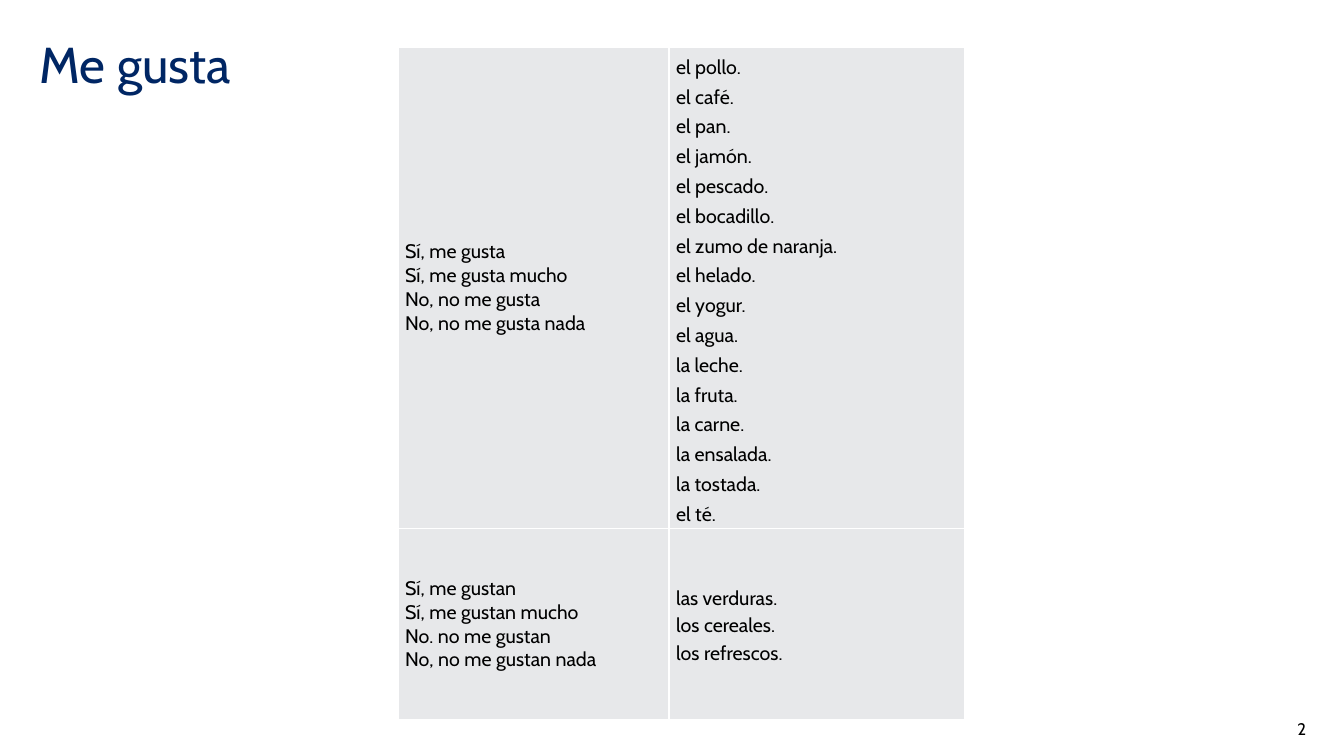
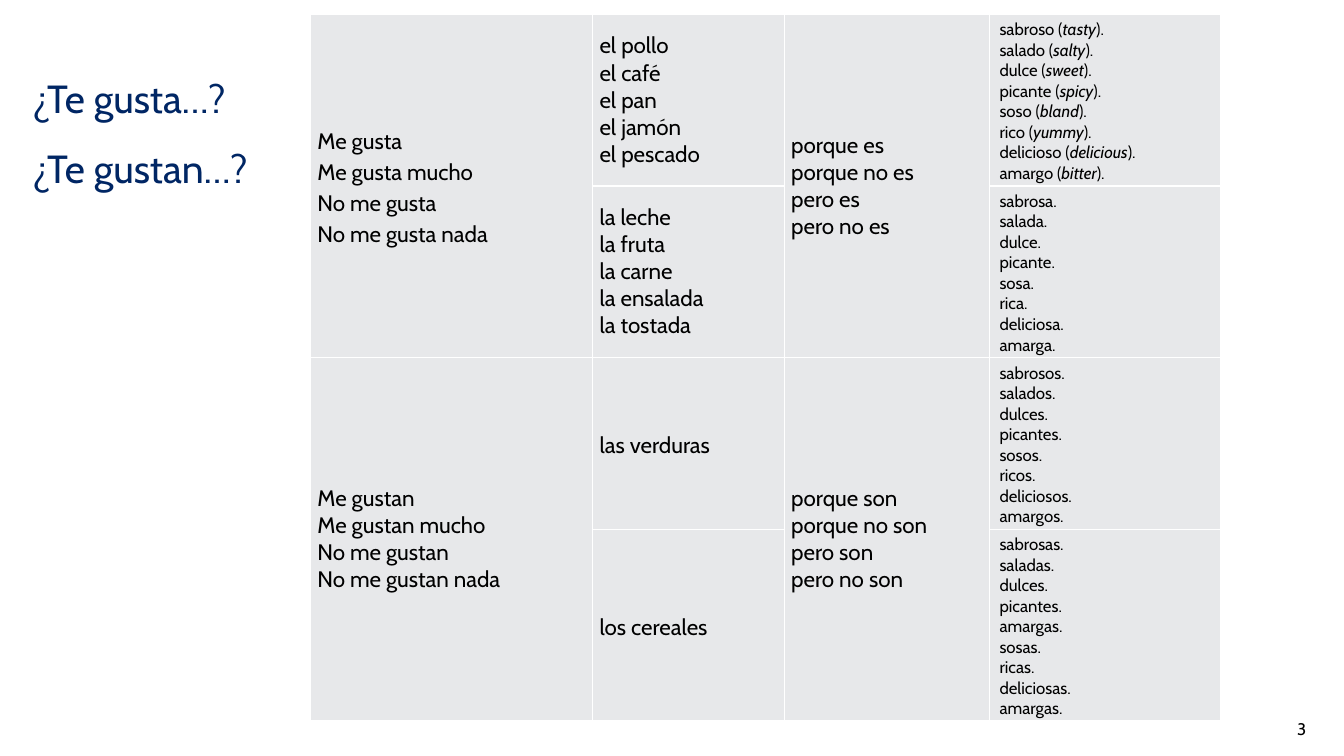
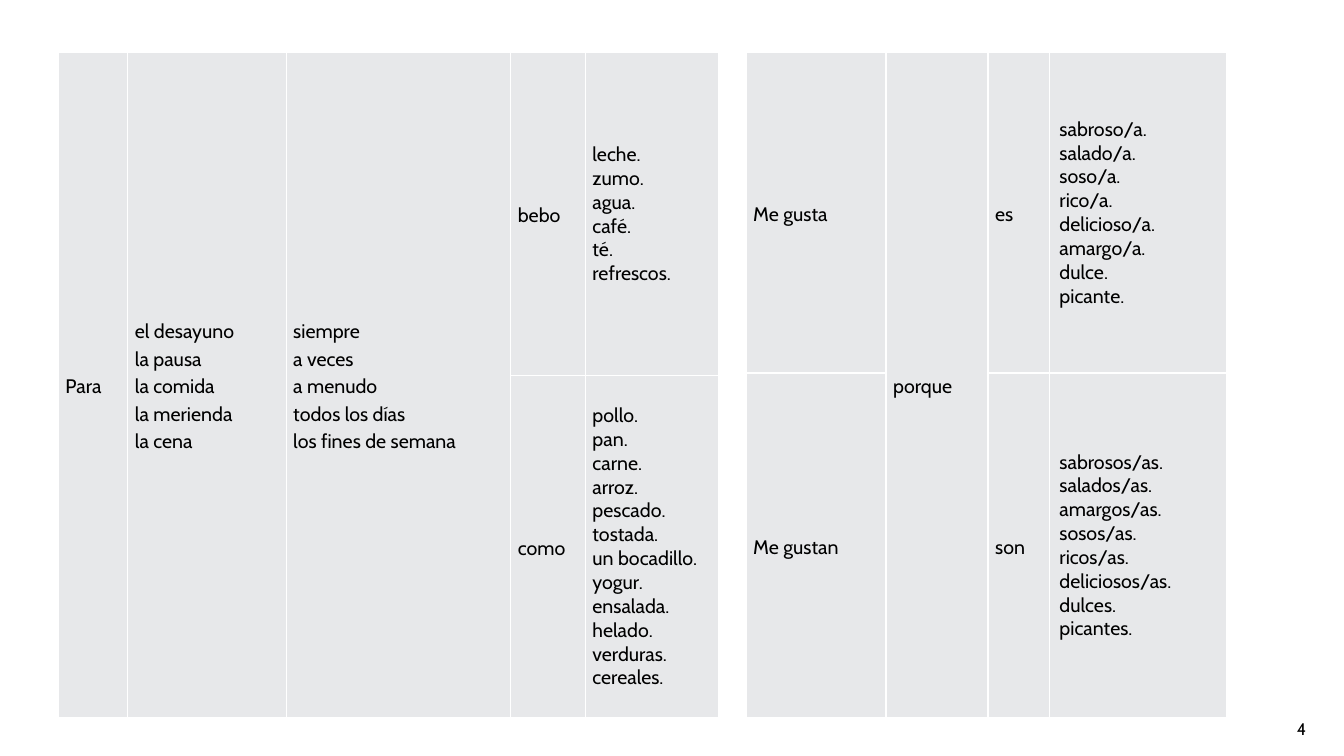
from dataclasses import dataclass

from lxml.etree import SubElement
from pptx import Presentation
from pptx.dml.color import RGBColor
from pptx.enum.text import MSO_ANCHOR as Anchor, PP_ALIGN as Align
from pptx.oxml.ns import qn
from pptx.util import Cm, Pt

COLORS = {"title": "002664", "text": "000000", "cell": "E7E8EA", "border": "FFFFFF"}
FONT = "Cabin"


@dataclass
class Phrases:
    """Lines of one table cell; *stars* mark italics."""
    lines: str
    size: int = 14
    spacing: float = 1.0
    span: int = 1
    roomy: bool = False


def write_text(tf, lines, size=14, color="text", spacing=1.0, align=Align.LEFT):
    tf.word_wrap = True
    for i, line in enumerate(lines):
        p = tf.paragraphs[0] if i == 0 else tf.add_paragraph()
        p.alignment, p.line_spacing = align, spacing
        for j, part in enumerate(line.split("*")):
            r = p.add_run()
            r.text = part
            r.font.name, r.font.size = FONT, Pt(size)
            r.font.italic = j % 2 == 1
            r.font.color.rgb = RGBColor.from_string(COLORS[color])


def add_text(s, box, lines, **fmt):
    tf = s.shapes.add_textbox(*map(Cm, box)).text_frame
    tf.margin_left = tf.margin_right = tf.margin_top = tf.margin_bottom = 0
    tf.vertical_anchor = Anchor.TOP
    write_text(tf, lines, **fmt)


def add_title(s, box, lines, size, spacing):
    add_text(s, box, lines, size=size, spacing=spacing, color="title")


def add_slide(prs, number):
    s = prs.slides.add_slide(prs.slide_layouts[6])
    add_text(s, (30.91, 18.11, 2.01, 0.51), [str(number)], size=12, align=Align.RIGHT)
    return s


def style_cell(cell):
    tc_pr = cell._tc.get_or_add_tcPr()
    for side in ("lnL", "lnR", "lnT", "lnB"):
        ln = SubElement(tc_pr, qn(f"a:{side}"), w=str(Pt(1)))
        SubElement(SubElement(ln, qn("a:solidFill")), qn("a:srgbClr"), val=COLORS["border"])
    cell.fill.solid()
    cell.fill.fore_color.rgb = RGBColor.from_string(COLORS["cell"])


def add_phrase_table(s, left, top, widths, heights, rows):
    """Place a table of phrases; None stands for a cell covered by a span."""
    frame = s.shapes.add_table(len(heights), len(widths), Cm(left), Cm(top),
                               Cm(sum(widths)), Cm(sum(heights)))
    table = frame.table
    table.first_row = table.horz_banding = False
    for column, width in zip(table.columns, widths):
        column.width = Cm(width)
    for row, height in zip(table.rows, heights):
        row.height = Cm(height)
    for i, row in enumerate(rows):
        for j, phrases in enumerate(row):
            cell = table.cell(i, j)
            style_cell(cell)
            if phrases is None:
                continue
            if phrases.span > 1:
                cell.merge(table.cell(i + phrases.span - 1, j))
            cell.vertical_anchor = Anchor.MIDDLE
            side, edge = (0.25, 0.13) if phrases.roomy else (0.18, 0)
            cell.margin_left = cell.margin_right = Cm(side)
            cell.margin_top = cell.margin_bottom = Cm(edge)
            write_text(cell.text_frame, phrases.lines.split("|"),
                       size=phrases.size, spacing=phrases.spacing)


def likes_slide(prs):
    s = add_slide(prs, 2)
    add_title(s, (1, 1, 10.82, 1.57), ["Me gusta"], size=36, spacing=0.9)
    add_phrase_table(s, 10.03, 1.19, (6.83, 7.44), (12.12, 4.83), [
        [Phrases("Sí, me gusta|Sí, me gusta mucho|No, no me gusta|No, no me gusta nada"),
         Phrases("el pollo.|el café.|el pan.|el jamón.|el pescado.|el bocadillo.|"
                 "el zumo de naranja.|el helado.|el yogur.|el agua.|la leche.|la fruta.|"
                 "la carne.|la ensalada.|la tostada.|el té.", spacing=1.25)],
        [Phrases("Sí, me gustan|Sí, me gustan mucho|No. no me gustan|No, no me gustan nada"),
         Phrases("las verduras.|los cereales.|los refrescos.", spacing=1.15)],
    ])


def reasons_slide(prs):
    def main(lines, **fmt):
        return Phrases(lines, size=16, **fmt)

    def adjectives(lines):
        return Phrases(lines, size=12, roomy=True)

    s = add_slide(prs, 3)
    add_title(s, (0.81, 1.27, 6.78, 3.3), ["¿Te gusta…?", "¿Te gustan…?"],
              size=28, spacing=1.5)
    add_phrase_table(s, 7.82, 0.36, (7.11, 4.83, 5.18, 5.82), (4.24, 4.24, 4.22, 4.72), [
        [main("Me gusta|Me gusta mucho|No me gusta|No me gusta nada", spacing=1.15, span=2),
         main("el pollo|el café|el pan|el jamón|el pescado"),
         main("porque es|porque no es|pero es|pero no es", span=2),
         adjectives("sabroso (*tasty*).|salado (*salty*).|dulce (*sweet*).|picante (*spicy*).|"
                    "soso (*bland*).|rico (*yummy*).|delicioso (*delicious*).|"
                    "amargo (*bitter*).")],
        [None,
         main("la leche|la fruta|la carne|la ensalada|la tostada"),
         None,
         adjectives("sabrosa.|salada.|dulce.|picante.|sosa.|rica.|deliciosa.|amarga.")],
        [main("Me gustan|Me gustan mucho|No me gustan|No me gustan nada", span=2),
         main("las verduras", spacing=1.15),
         main("porque son|porque no son|pero son|pero no son", span=2),
         adjectives("sabrosos.|salados.|dulces.|picantes.|sosos.|ricos.|deliciosos.|amargos.")],
        [None,
         main("los cereales", spacing=1.15),
         None,
         adjectives("sabrosas.|saladas.|dulces.|picantes.|amargas.|sosas.|ricas.|"
                    "deliciosas.|amargas.")],
    ])


def meals_slide(prs):
    def spaced(lines, span=1):
        return Phrases(lines, spacing=1.15, span=span)

    s = add_slide(prs, 4)
    # Meals, frequency, food and drink
    add_phrase_table(s, 1.47, 1.32, (1.75, 3.99, 5.66, 1.88, 3.35), (8.15, 8.61), [
        [spaced("Para", span=2),
         spaced("el desayuno|la pausa|la comida|la merienda|la cena", span=2),
         spaced("siempre|a veces|a menudo|todos los días|los fines de semana", span=2),
         spaced("bebo"),
         Phrases("leche.|zumo.|agua.|café.|té.|refrescos.")],
        [None, None, None,
         spaced("como"),
         Phrases("pollo.|pan.|carne.|arroz.|pescado.|tostada.|un bocadillo.|yogur.|"
                 "ensalada.|helado.|verduras.|cereales.")],
    ])
    # Opinions and adjectives
    add_phrase_table(s, 18.8, 1.32, (3.53, 2.57, 1.55, 4.47), (8.08, 8.69), [
        [spaced("Me gusta"), spaced("porque", span=2), spaced("es"),
         Phrases("sabroso/a.|salado/a.|soso/a.|rico/a.|delicioso/a.|amargo/a.|dulce.|picante.",
                 roomy=True)],
        [spaced("Me gustan"), None, spaced("son"),
         Phrases("sabrosos/as.|salados/as.|amargos/as.|sosos/as.|ricos/as.|deliciosos/as.|"
                 "dulces.|picantes.", roomy=True)],
    ])


def main():
    prs = Presentation()
    prs.slide_width, prs.slide_height = Cm(33.87), Cm(19.05)
    for build in (likes_slide, reasons_slide, meals_slide):
        build(prs)
    prs.save("out.pptx")


if __name__ == "__main__":
    main()
